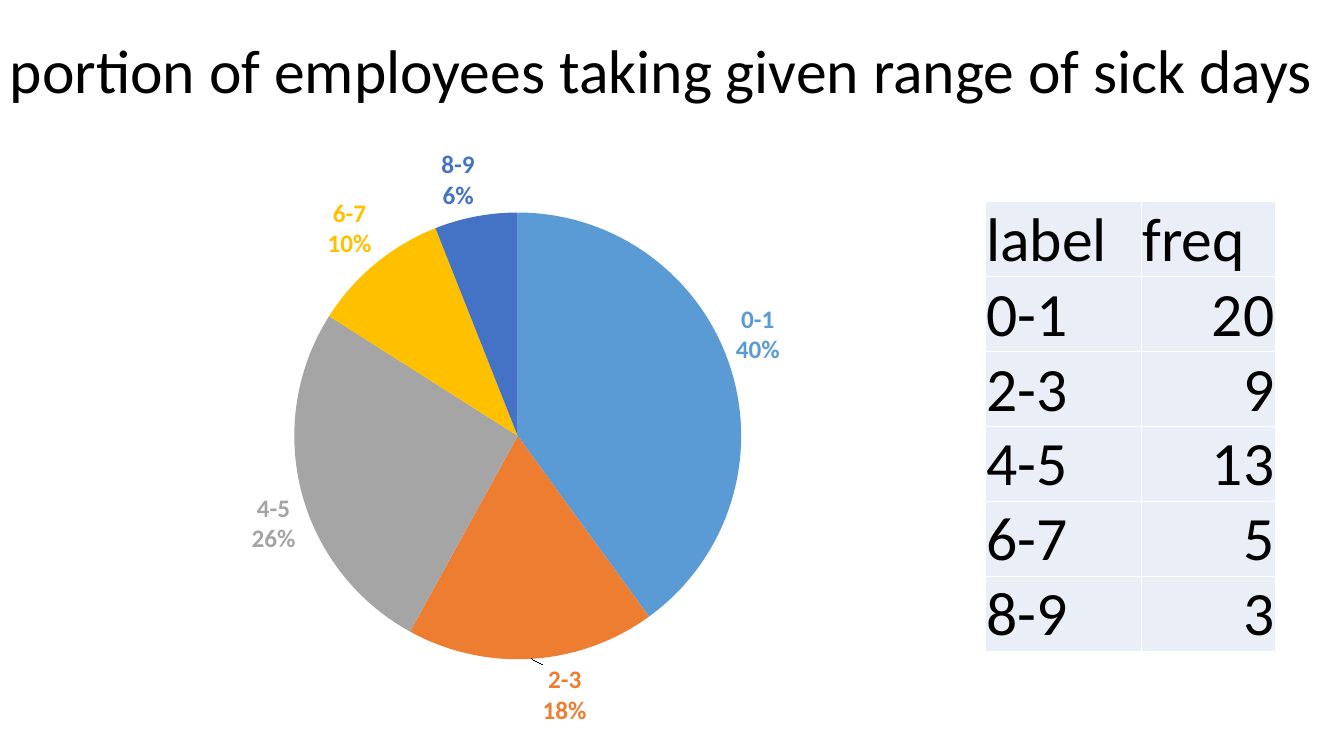
from lxml import etree
from pptx import Presentation
from pptx.chart.data import CategoryChartData
from pptx.dml.color import RGBColor
from pptx.enum.chart import XL_CHART_TYPE, XL_LABEL_POSITION
from pptx.enum.text import MSO_ANCHOR, PP_ALIGN
from pptx.oxml import parse_xml
from pptx.oxml.ns import nsdecls, qn
from pptx.util import Inches, Pt

FONT = "Calibri"
RANGES = ["0-1", "2-3", "4-5", "6-7", "8-9"]
PERCENTS = [40, 18, 26, 10, 6]
FREQUENCIES = [20, 9, 13, 5, 3]
SLICE_COLORS = ["5B9BD5", "ED7D31", "A5A5A5", "FFC000", "4472C4"]


def color(hex_code):
    """Turn a hex string into a colour."""
    return RGBColor.from_string(hex_code)


def style(font, size, hex_code="000000", bold=False):
    """Apply the slide's typeface with a size and colour."""
    font.name = FONT
    font.size = Pt(size)
    font.bold = bold
    font.color.rgb = color(hex_code)


def add_title(slide, text):
    """Place the heading across the top of the slide."""
    heading = slide.shapes.add_textbox(0, 0, Inches(13.33), Inches(1.45)).text_frame
    heading.word_wrap = True
    heading.vertical_anchor = MSO_ANCHOR.MIDDLE
    heading.text = text
    heading.paragraphs[0].line_spacing = 0.9
    style(heading.paragraphs[0].runs[0].font, 44)


def manual_layout(x, y, inner_size=None):
    """Build a chart layout; with a size it fixes the inner plot area."""
    target, modes, extent = "", "", ""
    if inner_size:
        target = '<c:layoutTarget val="inner"/>'
        modes = '<c:xMode val="edge"/><c:yMode val="edge"/>'
        extent = '<c:w val="{}"/><c:h val="{}"/>'.format(*inner_size)
    return parse_xml(
        f'<c:layout {nsdecls("c")}><c:manualLayout>{target}{modes}'
        f'<c:x val="{x}"/><c:y val="{y}"/>{extent}</c:manualLayout></c:layout>'
    )


def show_range_and_percent(label):
    """Make a label show its category above its percentage."""
    for tag, shown in (("c:showVal", "0"), ("c:showCatName", "1"), ("c:showPercent", "1")):
        label.find(qn(tag)).set("val", shown)
    separator = etree.Element(qn("c:separator"))
    separator.text = "\n"
    last_flag = label.find(qn("c:showBubbleSize"))
    if last_flag is None:
        last_flag = label.find(qn("c:showPercent"))
    last_flag.addnext(separator)


def add_pie(slide):
    """Draw the pie with a coloured label beside each slice."""
    shares = CategoryChartData()
    shares.categories = RANGES
    shares.add_series("Series 1", PERCENTS)
    pie = slide.shapes.add_chart(
        XL_CHART_TYPE.PIE, Inches(1.05), Inches(1.33), Inches(8.09), Inches(5.99), shares
    ).chart
    pie.has_legend = False
    pie.has_title = False
    style(pie.font, 18)
    plot = pie.plots[0]
    plot.vary_by_categories = True
    series = plot.series[0]
    labels = series.data_labels
    labels.position = XL_LABEL_POSITION.OUTSIDE_END
    labels.number_format = "0%"
    labels.number_format_is_linked = False
    for index, hex_code in enumerate(SLICE_COLORS):
        point = series.points[index]
        point.format.fill.solid()
        point.format.fill.fore_color.rgb = color(hex_code)
        style(point.data_label.font, 18, hex_code, bold=True)
        point.data_label.position = XL_LABEL_POSITION.OUTSIDE_END
    for label in pie.element.xpath(".//c:ser/c:dLbls | .//c:ser/c:dLbls/c:dLbl"):
        show_range_and_percent(label)
    moved_label = pie.element.xpath(".//c:dLbl/c:idx[@val='1']")[0]
    moved_label.addnext(manual_layout(0.04, 0))
    plot_area = pie.element.xpath(".//c:plotArea")[0]
    for layout in plot_area.findall(qn("c:layout")):
        plot_area.remove(layout)
    plot_area.insert(0, manual_layout(0.23, 0.13, (0.55, 0.74)))


def add_borders(cell):
    """Give a cell thin white lines on all sides."""
    properties = cell._tc.get_or_add_tcPr()
    for position, side in enumerate(("lnL", "lnR", "lnT", "lnB")):
        properties.insert(position, parse_xml(
            f'<a:{side} {nsdecls("a")} w="12700"><a:solidFill>'
            f'<a:srgbClr val="FFFFFF"/></a:solidFill></a:{side}>'
        ))


def fill_cell(cell, text, align):
    """Write and format one table cell."""
    cell.fill.solid()
    cell.fill.fore_color.rgb = color("EAEFF7")
    cell.margin_left = cell.margin_right = cell.margin_top = Inches(0.01)
    cell.margin_bottom = 0
    cell.vertical_anchor = MSO_ANCHOR.BOTTOM
    cell.text = text
    paragraph = cell.text_frame.paragraphs[0]
    paragraph.alignment = align
    style(paragraph.runs[0].font, 44)
    add_borders(cell)


def add_frequency_table(slide):
    """List the number of employees for each range."""
    rows = [("label", "freq"), *zip(RANGES, FREQUENCIES)]
    table = slide.shapes.add_table(
        len(rows), 2, Inches(9.77), Inches(2), Inches(2.88), Inches(0.7 * len(rows))
    ).table
    for column, width in zip(table.columns, (1.55, 1.33)):
        column.width = Inches(width)
    for row_index, row in enumerate(rows):
        for column_index, value in enumerate(row):
            align = PP_ALIGN.RIGHT if isinstance(value, int) else PP_ALIGN.LEFT
            fill_cell(table.cell(row_index, column_index), str(value), align)


def main():
    """Build and save the slide."""
    presentation = Presentation()
    presentation.slide_width = Inches(13.33)
    presentation.slide_height = Inches(7.5)
    slide = presentation.slides.add_slide(presentation.slide_layouts[6])
    add_title(slide, "portion of employees taking given range of sick days")
    add_pie(slide)
    add_frequency_table(slide)
    presentation.save("out.pptx")


if __name__ == "__main__":
    main()
